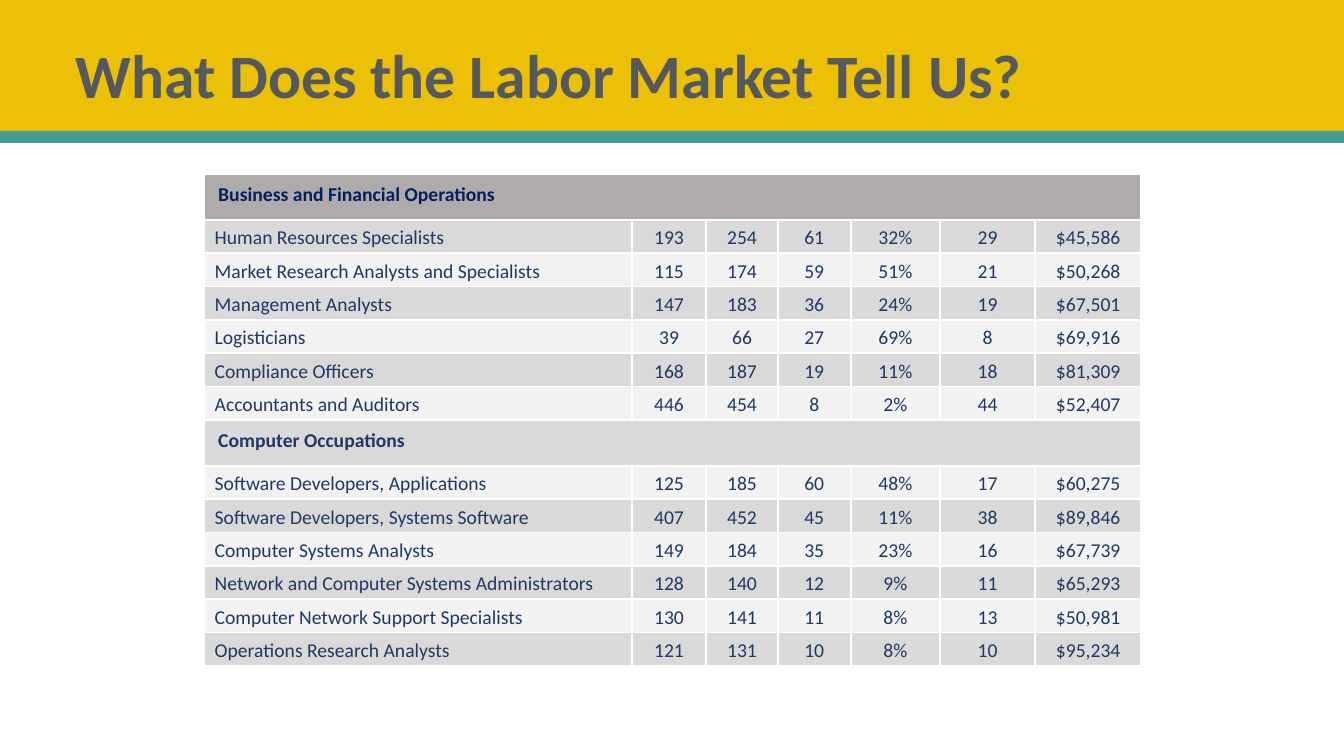
from dataclasses import dataclass

from lxml import etree
from pptx import Presentation
from pptx.dml.color import RGBColor
from pptx.enum.shapes import MSO_SHAPE
from pptx.enum.text import MSO_ANCHOR, PP_ALIGN
from pptx.oxml.ns import qn
from pptx.util import Cm, Pt

RECTANGLE = MSO_SHAPE.RECTANGLE
TOP, MIDDLE = MSO_ANCHOR.TOP, MSO_ANCHOR.MIDDLE
LEFT, CENTER = PP_ALIGN.LEFT, PP_ALIGN.CENTER

FONT = "Calibri"
YELLOW, TEAL, GRAY = "ECC007", "469C95", "54595F"
NAVY, BLUE, WHITE = "002060", "1F3864", "FFFFFF"
HEADER_FILL, DARK_BAND, LIGHT_BAND = "AFABAB", "D9D9D9", "F2F2F2"

SLIDE_WIDTH, SLIDE_HEIGHT = 33.87, 19.05
COLUMN_WIDTHS = (10.78, 1.88, 1.8, 1.84, 2.25, 2.4, 2.67)
SECTION_HEIGHT, OCCUPATION_HEIGHT = 1.16, 0.84


@dataclass(frozen=True)
class Band:
    top: float
    height: float
    fill: str


@dataclass(frozen=True)
class CellStyle:
    color: str
    bold: bool
    anchor: MSO_ANCHOR
    side_margin: float
    top_margin: float
    bottom_margin: float


@dataclass(frozen=True)
class Section:
    title: str
    style: CellStyle
    occupations: tuple[tuple[str, ...], ...]


BANDS = (Band(0, 3.58, YELLOW), Band(3.3, 0.3, TEAL))
FIRST_SECTION = CellStyle(NAVY, True, TOP, 0.36, 0.18, 0.18)
LATER_SECTION = CellStyle(BLUE, True, TOP, 0.36, 0.18, 0.18)
OCCUPATION = CellStyle(BLUE, False, MIDDLE, 0.27, 0.03, 0)

SECTIONS = (
    Section("Business and Financial Operations", FIRST_SECTION, (
        ("Human Resources Specialists", "193", "254", "61", "32%", "29", "$45,586"),
        ("Market Research Analysts and Specialists", "115", "174", "59", "51%", "21", "$50,268"),
        ("Management Analysts", "147", "183", "36", "24%", "19", "$67,501"),
        ("Logisticians", "39", "66", "27", "69%", "8", "$69,916"),
        ("Compliance Officers", "168", "187", "19", "11%", "18", "$81,309"),
        ("Accountants and Auditors", "446", "454", "8", "2%", "44", "$52,407"),
    )),
    Section("Computer Occupations", LATER_SECTION, (
        ("Software Developers, Applications", "125", "185", "60", "48%", "17", "$60,275"),
        ("Software Developers, Systems Software", "407", "452", "45", "11%", "38", "$89,846"),
        ("Computer Systems Analysts", "149", "184", "35", "23%", "16", "$67,739"),
        ("Network and Computer Systems Administrators", "128", "140", "12", "9%", "11", "$65,293"),
        ("Computer Network Support Specialists", "130", "141", "11", "8%", "13", "$50,981"),
        ("Operations Research Analysts", "121", "131", "10", "8%", "10", "$95,234"),
    )),
)


def rgb(color: str) -> RGBColor:
    return RGBColor.from_string(color)


def add_run(paragraph, text: str, size: float, color: str, bold: bool) -> None:
    run = paragraph.add_run()
    run.text = text
    run.font.name = FONT
    run.font.size = Pt(size)
    run.font.bold = bold
    run.font.color.rgb = rgb(color)


def add_band(slide, band: Band) -> None:
    shape = slide.shapes.add_shape(
        RECTANGLE, Cm(0), Cm(band.top), Cm(SLIDE_WIDTH), Cm(band.height))
    shape.shadow.inherit = False
    shape.fill.solid()
    shape.fill.fore_color.rgb = rgb(band.fill)
    shape.line.fill.background()


def add_title(slide, text: str) -> None:
    frame = slide.shapes.add_textbox(Cm(1.65), Cm(0.13), Cm(29.21), Cm(3.68)).text_frame
    frame.word_wrap = True
    frame.vertical_anchor = MIDDLE
    paragraph = frame.paragraphs[0]
    paragraph.line_spacing = 0.9
    add_run(paragraph, text, 44, GRAY, True)


def paint_cell(cell, fill: str) -> None:
    properties = cell._tc.get_or_add_tcPr()
    for side in ("a:lnL", "a:lnR", "a:lnT", "a:lnB"):
        border = etree.SubElement(properties, qn(side), w=str(Pt(1.5)))
        solid = etree.SubElement(border, qn("a:solidFill"))
        etree.SubElement(solid, qn("a:srgbClr"), val=WHITE)
    cell.fill.solid()
    cell.fill.fore_color.rgb = rgb(fill)


def write_cell(cell, text: str, style: CellStyle, alignment: PP_ALIGN) -> None:
    cell.vertical_anchor = style.anchor
    cell.margin_left = cell.margin_right = Cm(style.side_margin)
    cell.margin_top = Cm(style.top_margin)
    cell.margin_bottom = Cm(style.bottom_margin)
    paragraph = cell.text_frame.paragraphs[0]
    paragraph.alignment = alignment
    paragraph.line_spacing = 1.07
    add_run(paragraph, text, 14, style.color, style.bold)


def add_labor_table(slide, sections: tuple[Section, ...]) -> None:
    rows = []
    for section in sections:
        rows.append(((section.title,), section.style, SECTION_HEIGHT))
        rows.extend((values, OCCUPATION, OCCUPATION_HEIGHT) for values in section.occupations)

    height = sum(row_height for _, _, row_height in rows)
    table = slide.shapes.add_table(
        len(rows), len(COLUMN_WIDTHS), Cm(5.14), Cm(4.38),
        Cm(sum(COLUMN_WIDTHS)), Cm(height)).table
    for column, width in zip(table.columns, COLUMN_WIDTHS):
        column.width = Cm(width)

    # Fills alternate row by row below the header
    for index, (values, style, row_height) in enumerate(rows):
        table.rows[index].height = Cm(row_height)
        fill = DARK_BAND if index % 2 else LIGHT_BAND
        if index == 0:
            fill = HEADER_FILL
        for cell in table.rows[index].cells:
            paint_cell(cell, fill)
        if len(values) == 1:
            table.cell(index, 0).merge(table.cell(index, len(COLUMN_WIDTHS) - 1))
        for column, text in enumerate(values):
            write_cell(table.cell(index, column), text, style, CENTER if column else LEFT)


def main() -> None:
    presentation = Presentation()
    presentation.slide_width = Cm(SLIDE_WIDTH)
    presentation.slide_height = Cm(SLIDE_HEIGHT)
    slide = presentation.slides.add_slide(presentation.slide_layouts[6])

    # Heading bands
    for band in BANDS:
        add_band(slide, band)

    # Occupations table and title
    add_labor_table(slide, SECTIONS)
    add_title(slide, "What Does the Labor Market Tell Us?")

    presentation.save("out.pptx")


if __name__ == "__main__":
    main()
